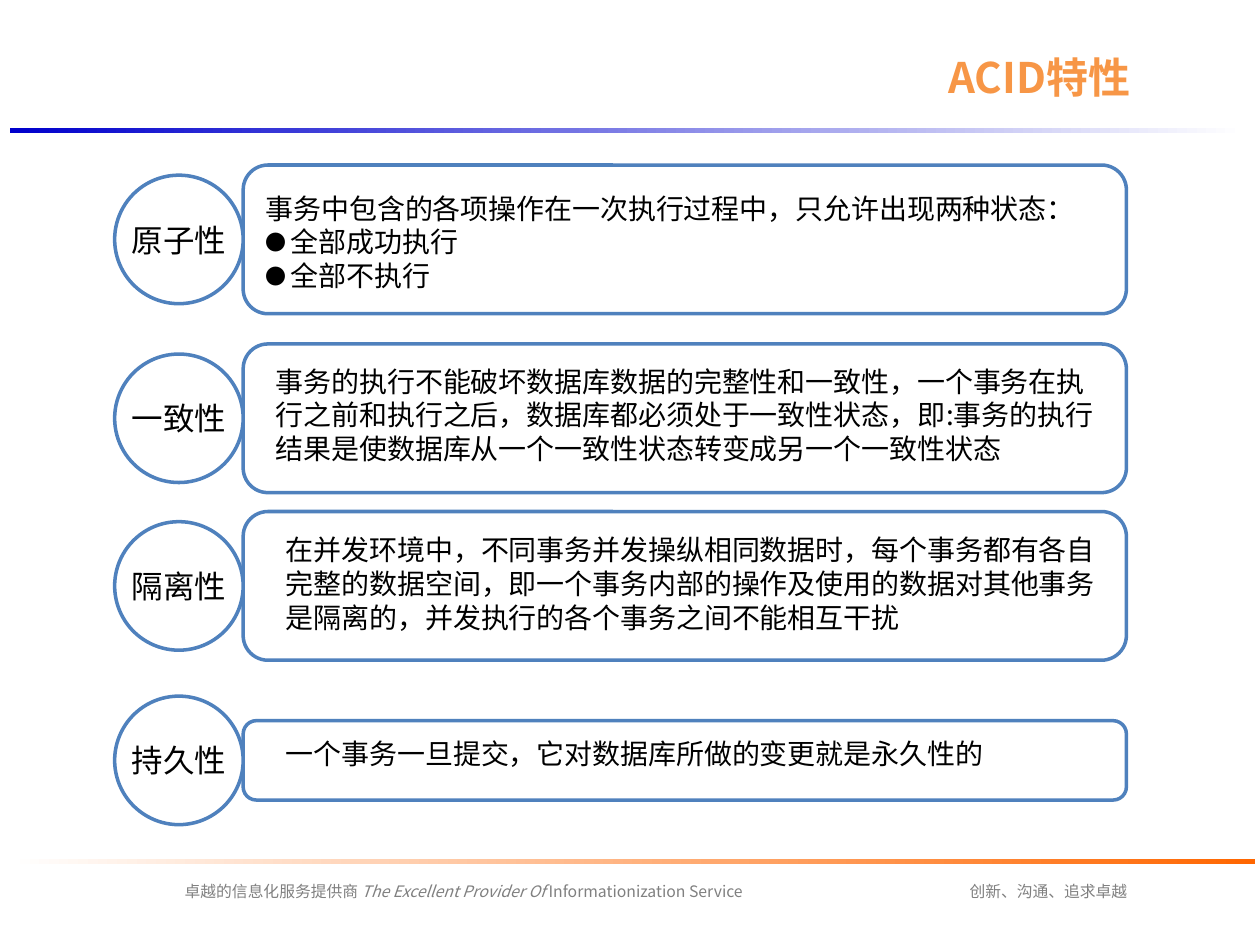
from dataclasses import dataclass

from lxml import etree
from pptx import Presentation
from pptx.dml.color import RGBColor
from pptx.enum import shapes, text
from pptx.oxml.ns import qn
from pptx.util import Inches, Pt

FONT = "Noto Sans CJK SC"
BLACK = RGBColor(0x00, 0x00, 0x00)
WHITE = RGBColor(0xFF, 0xFF, 0xFF)
GRAY = RGBColor(0x80, 0x80, 0x80)
BLUE = RGBColor(0x4F, 0x81, 0xBD)
NAVY = RGBColor(0x00, 0x00, 0xCC)
ORANGE = RGBColor(0xFF, 0x66, 0x00)
AMBER = RGBColor(0xF7, 0x96, 0x46)

CENTER = text.PP_ALIGN.CENTER
LEFT = text.PP_ALIGN.LEFT
KIND = shapes.MSO_SHAPE
DISC = 1.02
BOX_LEFT, BOX_WIDTH = 1.93, 7.01


@dataclass
class Trait:
    name: str
    top: float
    height: float
    text_left: float
    text_top: float
    body: str
    items: tuple[str, ...] = ()


TRAITS = [
    Trait("原子性", 1.31, 1.18, 2.01, 1.47,
          "事务中包含的各项操作在一次执行过程中，只允许出现两种状态：",
          ("全部成功执行", "全部不执行")),
    Trait("一致性", 2.73, 1.18, 2.09, 2.84,
          "事务的执行不能破坏数据库数据的完整性和一致性，一个事务在执行之前和"
          "执行之后，数据库都必须处于一致性状态，即:事务的执行结果是使数据库从"
          "一个一致性状态转变成另一个一致性状态"),
    Trait("隔离性", 4.06, 1.18, 2.17, 4.18,
          "在并发环境中，不同事务并发操纵相同数据时，每个事务都有各自完整的"
          "数据空间，即一个事务内部的操作及使用的数据对其他事务是隔离的，"
          "并发执行的各个事务之间不能相互干扰"),
    Trait("持久性", 5.72, 0.63, 2.17, 5.8,
          "一个事务一旦提交，它对数据库所做的变更就是永久性的"),
]


def style(para, size: float, color: RGBColor, align=LEFT, bold: bool = False) -> None:
    para.alignment = align
    font = para.font
    font.size, font.bold, font.name = Pt(size), bold, FONT
    font.color.rgb = color
    props = para._p.pPr.find(qn("a:defRPr"))
    etree.SubElement(props, qn("a:ea")).set("typeface", FONT)


def add_bullet(para) -> None:
    props = para._p.get_or_add_pPr()
    props.set("marL", str(Inches(0.2)))
    props.set("indent", str(-Inches(0.2)))
    etree.SubElement(props, qn("a:buSzPct")).set("val", "75000")
    etree.SubElement(props, qn("a:buFont")).set("typeface", FONT)
    etree.SubElement(props, qn("a:buChar")).set("char", "●")


def add_label(slide, left: float, top: float, width: float, height: float):
    box = slide.shapes.add_textbox(
        Inches(left), Inches(top), Inches(width), Inches(height))
    box.text_frame.word_wrap = True
    return box.text_frame


def add_rule(slide, top: float, width: float, start: RGBColor, end: RGBColor) -> None:
    """Draw a thin band that fades from left to right."""
    band = slide.shapes.add_shape(
        KIND.RECTANGLE, Inches(0.08), Inches(top), Inches(width), Inches(0.04))
    band.shadow.inherit = False
    band.line.fill.background()
    band.fill.gradient()
    band.fill.gradient_angle = 0
    for stop, color in zip(band.fill.gradient_stops, (start, end)):
        stop.color.rgb = color


def add_outline(slide, kind, left: float, top: float, width: float, height: float):
    shape = slide.shapes.add_shape(
        kind, Inches(left), Inches(top), Inches(width), Inches(height))
    shape.shadow.inherit = False
    shape.fill.solid()
    shape.fill.fore_color.rgb = WHITE
    shape.line.color.rgb = BLUE
    shape.line.width = Pt(2)
    return shape


def add_trait(slide, trait: Trait) -> None:
    add_outline(slide, KIND.ROUNDED_RECTANGLE,
                BOX_LEFT, trait.top, BOX_WIDTH, trait.height)
    lines = 3 if trait.height > 1 else 1
    frame = add_label(slide, trait.text_left, trait.text_top,
                      6.77, 0.1 + 0.27 * lines)
    frame.text = trait.body
    style(frame.paragraphs[0], 16, BLACK)
    for item in trait.items:
        para = frame.add_paragraph()
        para.text = item
        add_bullet(para)
        style(para, 16, BLACK)

    disc_top = trait.top + (trait.height - DISC) / 2
    disc = add_outline(slide, KIND.FLOWCHART_CONNECTOR,
                       BOX_LEFT - DISC, disc_top, DISC, DISC)
    frame = disc.text_frame
    frame.word_wrap = False
    frame.vertical_anchor = text.MSO_ANCHOR.MIDDLE
    frame.text = trait.name
    style(frame.paragraphs[0], 18, BLACK, CENTER)


def add_title(slide) -> None:
    title = slide.shapes.title
    title.left, title.top = Inches(7.13), Inches(0.21)
    title.width, title.height = Inches(2.24), Inches(0.79)
    title.text_frame.vertical_anchor = text.MSO_ANCHOR.MIDDLE
    title.text_frame.text = "ACID特性"
    style(title.text_frame.paragraphs[0], 24, AMBER, CENTER, bold=True)


def add_footer(slide) -> None:
    add_rule(slide, 6.82, 9.88, WHITE, ORANGE)
    motto = add_label(slide, 7.11, 6.95, 2.42, 0.25)
    motto.text = "创新、沟通、追求卓越"
    style(motto.paragraphs[0], 9, GRAY, CENTER)

    para = add_label(slide, 1.18, 6.95, 5, 0.25).paragraphs[0]
    for words, italic in (("卓越的信息化服务提供商 ", False),
                          ("The Excellent Provider Of ", True),
                          ("Informationization Service", False)):
        run = para.add_run()
        run.text = words
        run.font.italic = italic
    style(para, 9, GRAY, CENTER)


def main() -> None:
    deck = Presentation()
    deck.slide_width, deck.slide_height = Inches(10), Inches(7.5)
    slide = deck.slides.add_slide(deck.slide_layouts[5])
    add_rule(slide, 1.02, 9.8, NAVY, WHITE)
    add_title(slide)
    add_footer(slide)
    for trait in TRAITS:
        add_trait(slide, trait)
    deck.save("out.pptx")


if __name__ == "__main__":
    main()
